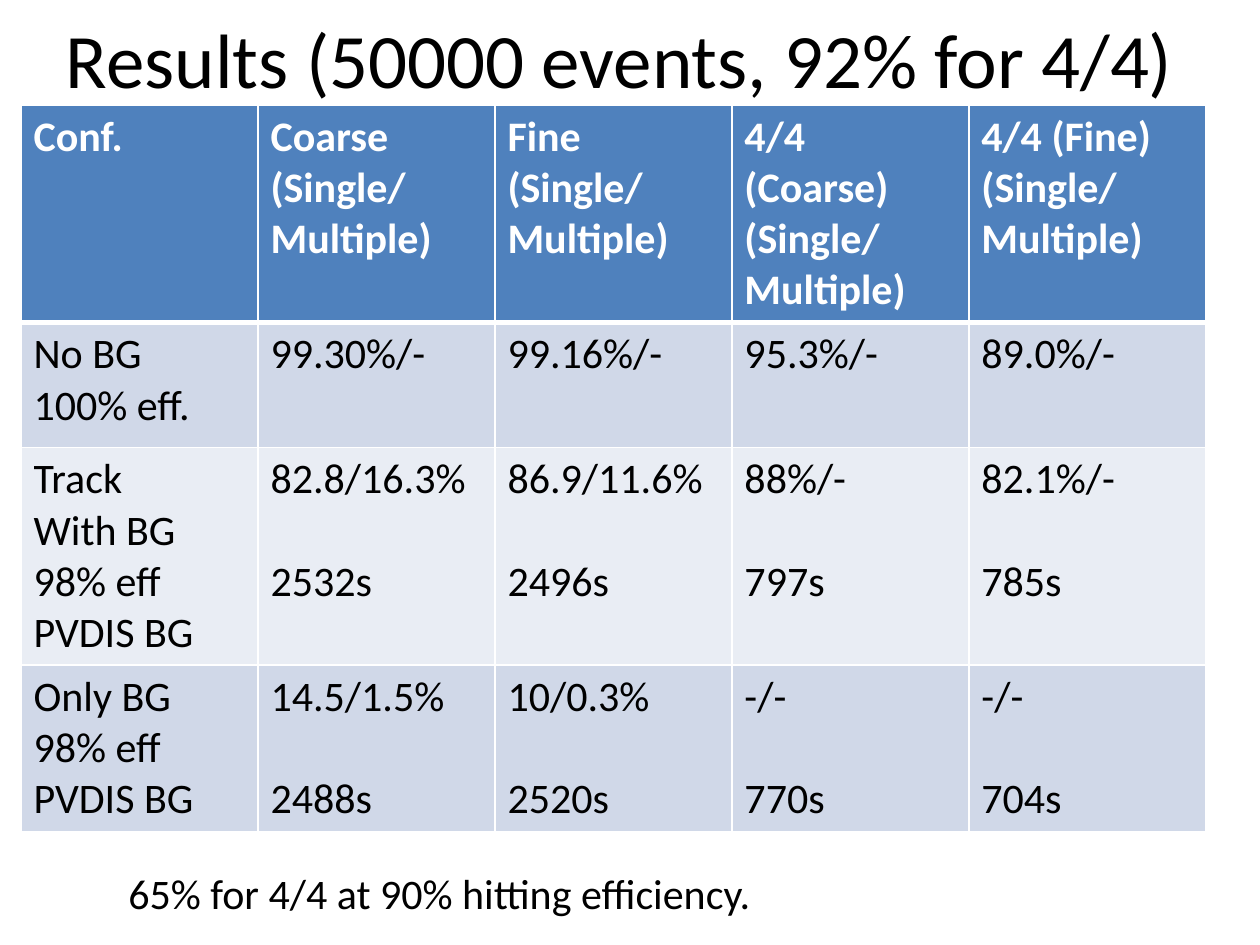
from lxml import etree
from pptx import Presentation
from pptx import util as u
from pptx.dml.color import RGBColor
from pptx.enum import text
from pptx.oxml import ns

PX = u.Inches(1) // 126
BLACK = RGBColor(0x00, 0x00, 0x00)
WHITE = RGBColor(0xFF, 0xFF, 0xFF)
HEADER_BLUE = RGBColor(0x4F, 0x81, 0xBD)
BAND_DARK = RGBColor(0xD0, 0xD8, 0xE8)
BAND_LIGHT = RGBColor(0xE9, 0xED, 0xF4)

TITLE_FONT = {"name": "Calibri", "size": u.Pt(44), "bold": False}
BODY_FONT = {"name": "Calibri", "size": u.Pt(24), "bold": False}
HEADER_FONT = {**BODY_FONT, "bold": True}

COLUMN_WIDTH = 237
ROW_HEIGHTS = [202, 125, 163, 163]
LINE_GAP = u.Pt(29.3)
MODES = "(Single/Multiple)"
RESULTS = [
    [["Conf."], ["Coarse", MODES], ["Fine", MODES],
     ["4/4 (Coarse)", MODES], ["4/4 (Fine)", MODES]],
    [["No BG", "100% eff."], ["99.30%/-"], ["99.16%/-"], ["95.3%/-"], ["89.0%/-"]],
    [["Track", "With BG", "98% eff", "PVDIS BG"], ["82.8/16.3%", "2532s"],
     ["86.9/11.6%", "2496s"], ["88%/-", "797s"], ["82.1%/-", "785s"]],
    [["Only BG", "98% eff", "PVDIS BG"], ["14.5/1.5%", "2488s"],
     ["10/0.3%", "2520s"], ["-/-", "770s"], ["-/-", "704s"]],
]


def px(*lengths):
    return [length * PX for length in lengths]


def set_all(target, values):
    for key, value in values.items():
        setattr(target, key, value)


def write_lines(frame, lines, font, color, gap=0):
    for index, line in enumerate(lines):
        paragraph = frame.paragraphs[0] if index == 0 else frame.add_paragraph()
        if index and gap:
            paragraph.space_before = gap
        run = paragraph.add_run()
        run.text = line
        set_all(run.font, font)
        run.font.color.rgb = color


def add_borders(cell, widths):
    properties = cell._tc.get_or_add_tcPr()
    for side, points in widths.items():
        border = etree.SubElement(properties, ns.qn(f"a:ln{side}"), w=str(u.Pt(points)))
        fill = etree.SubElement(border, ns.qn("a:solidFill"))
        etree.SubElement(fill, ns.qn("a:srgbClr"), val=str(WHITE))


def add_title(slide, wording):
    title = slide.shapes.title
    set_all(title, dict(zip(("left", "top", "width", "height"), px(53, 0, 1134, 116))))
    set_all(title.text_frame, {"vertical_anchor": text.MSO_ANCHOR.MIDDLE, "word_wrap": True})
    write_lines(title.text_frame, [wording], TITLE_FONT, BLACK)
    title.text_frame.paragraphs[0].alignment = text.PP_ALIGN.CENTER


def add_results(slide):
    columns = len(RESULTS[0])
    table = slide.shapes.add_table(
        len(RESULTS), columns,
        *px(21, 105, COLUMN_WIDTH * columns, sum(ROW_HEIGHTS))).table
    for column in table.columns:
        column.width = COLUMN_WIDTH * PX
    for r, (height, entries) in enumerate(zip(ROW_HEIGHTS, RESULTS)):
        table.rows[r].height = height * PX
        header = r == 0
        band = HEADER_BLUE if header else (BAND_LIGHT, BAND_DARK)[r % 2]
        font, color = (HEADER_FONT, WHITE) if header else (BODY_FONT, BLACK)
        for c, lines in enumerate(entries):
            cell = table.cell(r, c)
            add_borders(cell, {"L": 1, "R": 1, "T": 3 if r == 1 else 1, "B": 3 if header else 1})
            cell.fill.solid()
            cell.fill.fore_color.rgb = band
            has_time = r > 1 and c > 0
            write_lines(cell.text_frame, lines, font, color, LINE_GAP if has_time else 0)


def add_note(slide, wording):
    frame = slide.shapes.add_textbox(*px(116, 861, 987, 63)).text_frame
    set_all(frame, {"word_wrap": True, "auto_size": text.MSO_AUTO_SIZE.SHAPE_TO_FIT_TEXT})
    write_lines(frame, [wording], BODY_FONT, BLACK)


def main():
    deck = Presentation()
    set_all(deck, {"slide_width": 1260 * PX, "slide_height": 945 * PX})
    slide = deck.slides.add_slide(deck.slide_layouts[5])
    add_title(slide, "Results (50000 events, 92% for 4/4)")
    add_results(slide)
    add_note(slide, "65% for 4/4 at 90% hitting efficiency.")
    deck.save("out.pptx")


if __name__ == "__main__":
    main()
